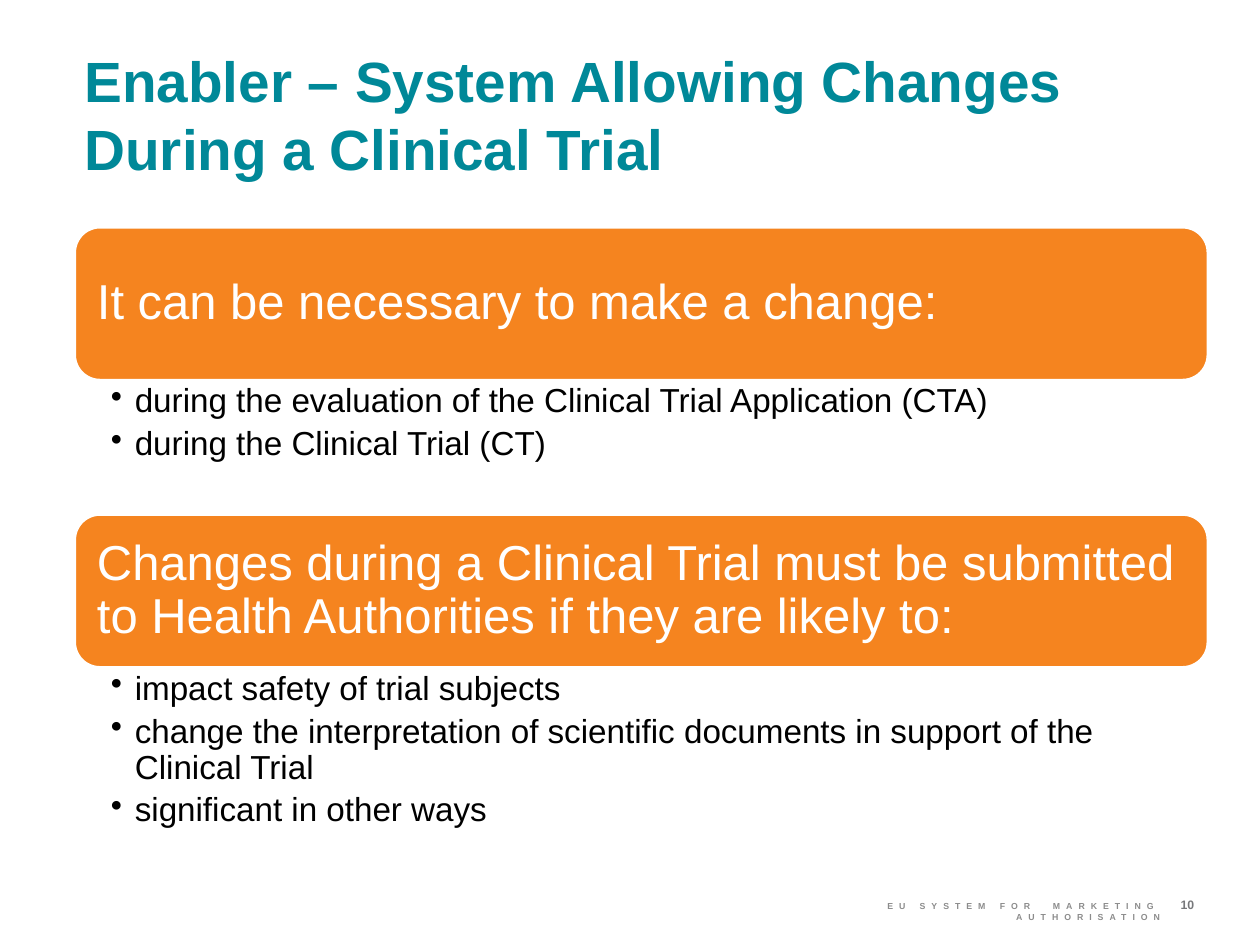
from lxml import etree
from pptx import Presentation
from pptx.dml.color import RGBColor
from pptx.enum.shapes import MSO_SHAPE
from pptx.enum.text import MSO_ANCHOR, MSO_AUTO_SIZE, PP_ALIGN
from pptx.oxml.ns import qn
from pptx.util import Inches, Pt

TEAL = RGBColor(0x00, 0x88, 0x98)
ORANGE = RGBColor(0xF5, 0x84, 0x1F)
WHITE = RGBColor(0xFF, 0xFF, 0xFF)
BLACK = RGBColor(0x00, 0x00, 0x00)
LIGHT_GRAY = RGBColor(0x8C, 0x8C, 0x8C)
DARK_GRAY = RGBColor(0x77, 0x78, 0x7B)

LEFT, WIDTH = 0.59, 9
BANNER_HEIGHT = 1.22
SECTIONS = [
    (1.8, 1.06, "It can be necessary to make a change:", [
        "during the evaluation of the Clinical Trial Application (CTA)",
        "during the Clinical Trial (CT)",
    ]),
    (4.08, 1.36, "Changes during a Clinical Trial must be submitted to Health "
                 "Authorities if they are likely to:", [
        "impact safety of trial subjects",
        "change the interpretation of scientific documents in support of the "
        "Clinical Trial",
        "significant in other ways",
    ]),
]


def write_text(shape, lines, size, color, bold=False, align=PP_ALIGN.LEFT,
               anchor=MSO_ANCHOR.TOP, insets=(0, 0, 0, 0), line_spacing=1.0,
               space_after=0, tracking=0, bullet_indent=0):
    """Fill a shape with one paragraph per line; insets run left, top, right, bottom."""
    frame = shape.text_frame
    frame.word_wrap = True
    frame.auto_size = MSO_AUTO_SIZE.NONE
    frame.vertical_anchor = anchor
    (frame.margin_left, frame.margin_top,
     frame.margin_right, frame.margin_bottom) = map(Inches, insets)
    for index, line in enumerate(lines):
        paragraph = frame.add_paragraph() if index else frame.paragraphs[0]
        paragraph.alignment = align
        paragraph.line_spacing = line_spacing
        paragraph.space_before = Pt(0)
        paragraph.space_after = Pt(space_after)
        run = paragraph.add_run()
        run.text = line
        run.font.name = "Arial"
        run.font.size = Pt(size)
        run.font.bold = bold
        run.font.color.rgb = color
        if tracking:
            run.font._element.set("spc", str(round(tracking * 100)))
        if bullet_indent:
            properties = paragraph._p.get_or_add_pPr()
            properties.set("marL", str(Inches(bullet_indent)))
            properties.set("indent", str(-Inches(bullet_indent)))
            etree.SubElement(properties, qn("a:buChar"), char="•")


presentation = Presentation()
presentation.slide_width = Inches(10)
presentation.slide_height = Inches(7.5)
slide = presentation.slides.add_slide(presentation.slide_layouts[5])
shapes = slide.shapes

title = shapes.title
title.left, title.top = Inches(0.67), Inches(0.36)
title.width, title.height = Inches(8.9), Inches(1.1)
write_text(title, ["Enabler – System Allowing Changes During a Clinical Trial"],
           size=32.4, color=TEAL, bold=True)

for top, list_height, heading, bullets in SECTIONS:
    banner = shapes.add_shape(MSO_SHAPE.ROUNDED_RECTANGLE, Inches(LEFT), Inches(top),
                              Inches(WIDTH), Inches(BANNER_HEIGHT))
    banner.shadow.inherit = False
    banner.fill.solid()
    banner.fill.fore_color.rgb = ORANGE
    banner.line.color.rgb = WHITE
    banner.line.width = Pt(2)
    write_text(banner, [heading], size=28, color=WHITE, anchor=MSO_ANCHOR.MIDDLE,
               insets=(0.12, 0.12, 0.12, 0.12), line_spacing=0.9)

    bullet_box = shapes.add_textbox(Inches(LEFT), Inches(top + BANNER_HEIGHT),
                                    Inches(WIDTH), Inches(list_height))
    write_text(bullet_box, bullets, size=19, color=BLACK, insets=(0.29, 0.03, 0.19, 0.03),
               line_spacing=0.9, space_after=4, bullet_indent=0.19)

footer = shapes.add_textbox(Inches(6.14), Inches(7.15), Inches(3.07), Inches(0.16))
write_text(footer, ["EU SYSTEM FOR  MARKETING AUTHORISATION"], size=5,
           color=LIGHT_GRAY, bold=True, align=PP_ALIGN.RIGHT, tracking=3.4)

page_number = shapes.add_textbox(Inches(9.37), Inches(7.12), Inches(0.43), Inches(0.17))
write_text(page_number, ["10"], size=7, color=DARK_GRAY, bold=True)

presentation.save("out.pptx")
